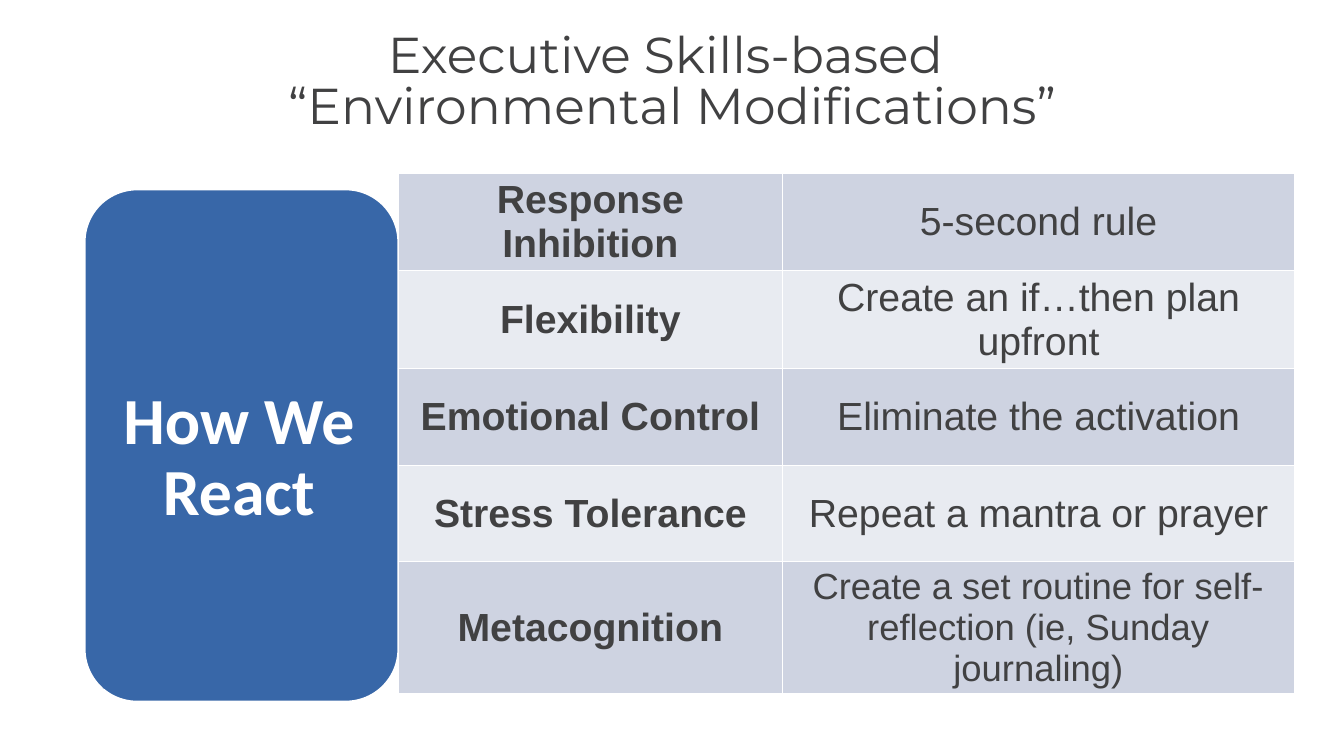
from lxml import etree
from pptx import Presentation
from pptx import util as u
from pptx.dml.color import RGBColor
from pptx.enum import shapes, text
from pptx.oxml.ns import qn

INK, BLUE, WHITE = "414142", "3867A8", "FFFFFF"
BANDS = ("CED3E1", "E8EBF1")
SKILLS = [
    ("Response Inhibition", "5-second rule", 28),
    ("Flexibility", "Create an if…then plan upfront", 28),
    ("Emotional Control", "Eliminate the activation", 28),
    ("Stress Tolerance", "Repeat a mantra or prayer", 28),
    ("Metacognition", "Create a set routine for self-reflection (ie, Sunday journaling)", 26),
]


def rgb(value):
    """Turn a hex string into a colour."""
    return RGBColor.from_string(value)


def inches(box):
    """Turn left, top, width and height into lengths."""
    return [u.Inches(v) for v in box]


def add_run(p, words, font, size, color, bold=False):
    """Add one formatted run to a centred paragraph."""
    p.alignment = text.PP_ALIGN.CENTER
    r = p.add_run()
    r.text = words
    r.font.name, r.font.size, r.font.bold = font, u.Pt(size), bold
    r.font.color.rgb = rgb(color)


def add_title(s, box):
    """Place the two-line title at the bottom of its box."""
    tf = s.shapes.add_textbox(*inches(box)).text_frame
    tf.word_wrap = True
    tf.vertical_anchor = text.MSO_ANCHOR.BOTTOM
    p = tf.paragraphs[0]
    p.line_spacing = 0.85
    add_run(p, "Executive Skills-based ", "Montserrat", 36, INK)
    p.add_line_break()
    add_run(p, "“Environmental Modifications”", "Montserrat", 36, INK)


def add_panel(s, box):
    """Place the rounded panel and its label."""
    left, top, width, height = box
    panel = s.shapes.add_shape(shapes.MSO_SHAPE.ROUNDED_RECTANGLE, *inches(box))
    panel.adjustments[0] = 0.167
    panel.line.color.rgb = rgb(WHITE)
    panel.line.width = u.Pt(1.25)
    label_box = (left + 0.18, top + 0.39, width - 0.41, height - 0.52)
    label = s.shapes.add_shape(shapes.MSO_SHAPE.RECTANGLE, *inches(label_box))
    label.line.fill.background()
    for sp in (panel, label):
        sp.shadow.inherit = False
        sp.fill.solid()
        sp.fill.fore_color.rgb = rgb(BLUE)
    tf = label.text_frame
    tf.word_wrap = True
    tf.vertical_anchor = text.MSO_ANCHOR.MIDDLE
    tf.margin_left = tf.margin_right = u.Inches(0.2)
    tf.margin_top = tf.margin_bottom = u.Inches(0.1)
    p = tf.paragraphs[0]
    p.line_spacing = 0.9
    add_run(p, "How We React", "Calibri", 47, WHITE, True)


def add_borders(cell):
    """Draw thin white lines on all four sides of a cell."""
    tc_pr = cell._tc.get_or_add_tcPr()
    for i, side in enumerate(("a:lnL", "a:lnR", "a:lnT", "a:lnB")):
        ln = etree.Element(qn(side), w=str(u.Pt(1)))
        fill = etree.SubElement(ln, qn("a:solidFill"))
        etree.SubElement(fill, qn("a:srgbClr"), val=WHITE)
        tc_pr.insert(i, ln)


def add_skills_table(s, box):
    """Place the table of skills and modifications."""
    table = s.shapes.add_table(len(SKILLS), 2, *inches(box)).table
    table.first_row = False
    for column, share in zip(table.columns, (3, 4)):
        column.width = u.Inches(box[2] * share / 7)
    for i, (skill, change, size) in enumerate(SKILLS):
        entries = ((skill, 28, True), (change, size, False))
        for j, (words, points, bold) in enumerate(entries):
            cell = table.cell(i, j)
            cell.fill.solid()
            cell.fill.fore_color.rgb = rgb(BANDS[i % 2])
            cell.vertical_anchor = text.MSO_ANCHOR.MIDDLE
            add_run(cell.text_frame.paragraphs[0], words, "Arial", points, INK, bold)
            add_borders(cell)


def main():
    """Build the slide and save it."""
    prs = Presentation()
    prs.slide_width, prs.slide_height = u.Inches(13.33), u.Inches(7.5)
    s = prs.slides.add_slide(prs.slide_layouts[6])
    add_panel(s, (0.84, 1.88, 3.11, 5.08))
    add_skills_table(s, (3.95, 1.72, 8.89, 4.8))
    add_title(s, (0.84, 0.52, 11.65, 0.87))
    prs.save("out.pptx")


if __name__ == "__main__":
    main()
